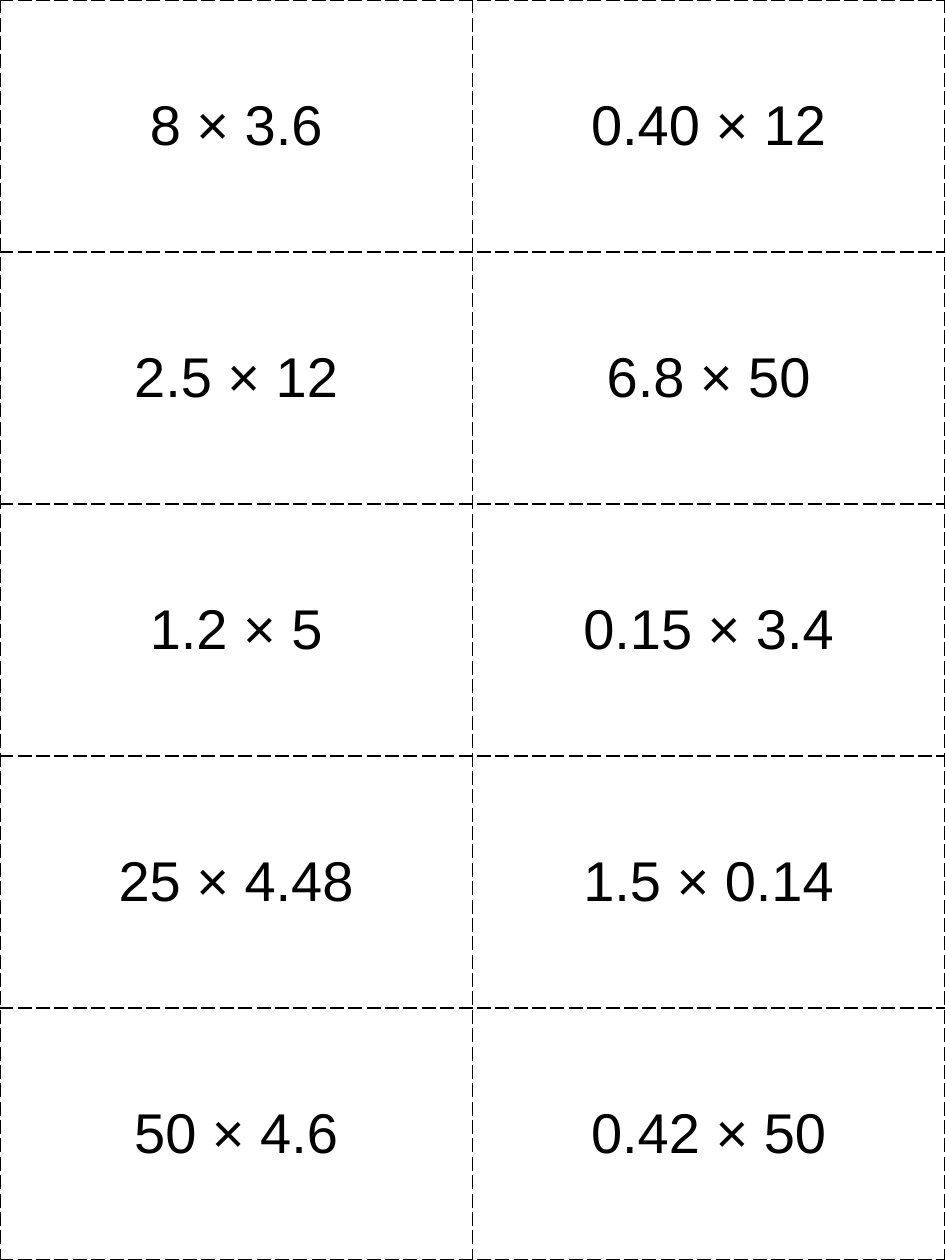
import pptx
import pptx.dml.color
import pptx.enum.text
import pptx.oxml.ns
import pptx.util
from lxml import etree

COLOURS = {"ink": "000000", "paper": "FFFFFF"}
PROBLEMS = [
    ("8 × 3.6", "0.40 × 12"),
    ("2.5 × 12", "6.8 × 50"),
    ("1.2 × 5", "0.15 × 3.4"),
    ("25 × 4.48", "1.5 × 0.14"),
    ("50 × 4.6", "0.42 × 50"),
]


def add_cut_lines(card):
    """Draw a dashed line on every side of a card."""
    properties = card._tc.get_or_add_tcPr()
    qn = pptx.oxml.ns.qn
    for side in ("a:lnL", "a:lnR", "a:lnT", "a:lnB"):
        line = etree.SubElement(properties, qn(side), w=str(pptx.util.Pt(1)))
        fill = etree.SubElement(line, qn("a:solidFill"))
        etree.SubElement(fill, qn("a:srgbClr"), val=COLOURS["ink"])
        etree.SubElement(line, qn("a:prstDash"), val="lgDash")


def fill_card(card, problem):
    """Centre one multiplication on its card."""
    add_cut_lines(card)
    card.fill.background()
    card.vertical_anchor = pptx.enum.text.MSO_ANCHOR.MIDDLE
    card.text = problem
    paragraph = card.text_frame.paragraphs[0]
    paragraph.alignment = pptx.enum.text.PP_ALIGN.CENTER
    paragraph.font.name = "Arial"
    paragraph.font.size = pptx.util.Pt(32)
    paragraph.font.color.rgb = pptx.dml.color.RGBColor.from_string(COLOURS["ink"])


def add_card_sheet(slide, left, top, width, height):
    """Divide the given box into equal cards, one for each problem."""
    sheet = slide.shapes.add_table(
        len(PROBLEMS), len(PROBLEMS[0]), left, top, width, height
    ).table
    sheet.first_row = False
    sheet.horz_banding = False
    for row, problems in enumerate(PROBLEMS):
        for column, problem in enumerate(problems):
            fill_card(sheet.cell(row, column), problem)


def main():
    deck = pptx.Presentation()
    deck.slide_width = pptx.util.Inches(7.5)
    deck.slide_height = pptx.util.Inches(10)
    slide = deck.slides.add_slide(deck.slide_layouts[6])

    # Background
    background = slide.background.fill
    background.solid()
    background.fore_color.rgb = pptx.dml.color.RGBColor.from_string(COLOURS["paper"])

    # Cards over the whole slide
    add_card_sheet(slide, 0, 0, deck.slide_width, deck.slide_height)
    deck.save("out.pptx")


if __name__ == "__main__":
    main()
